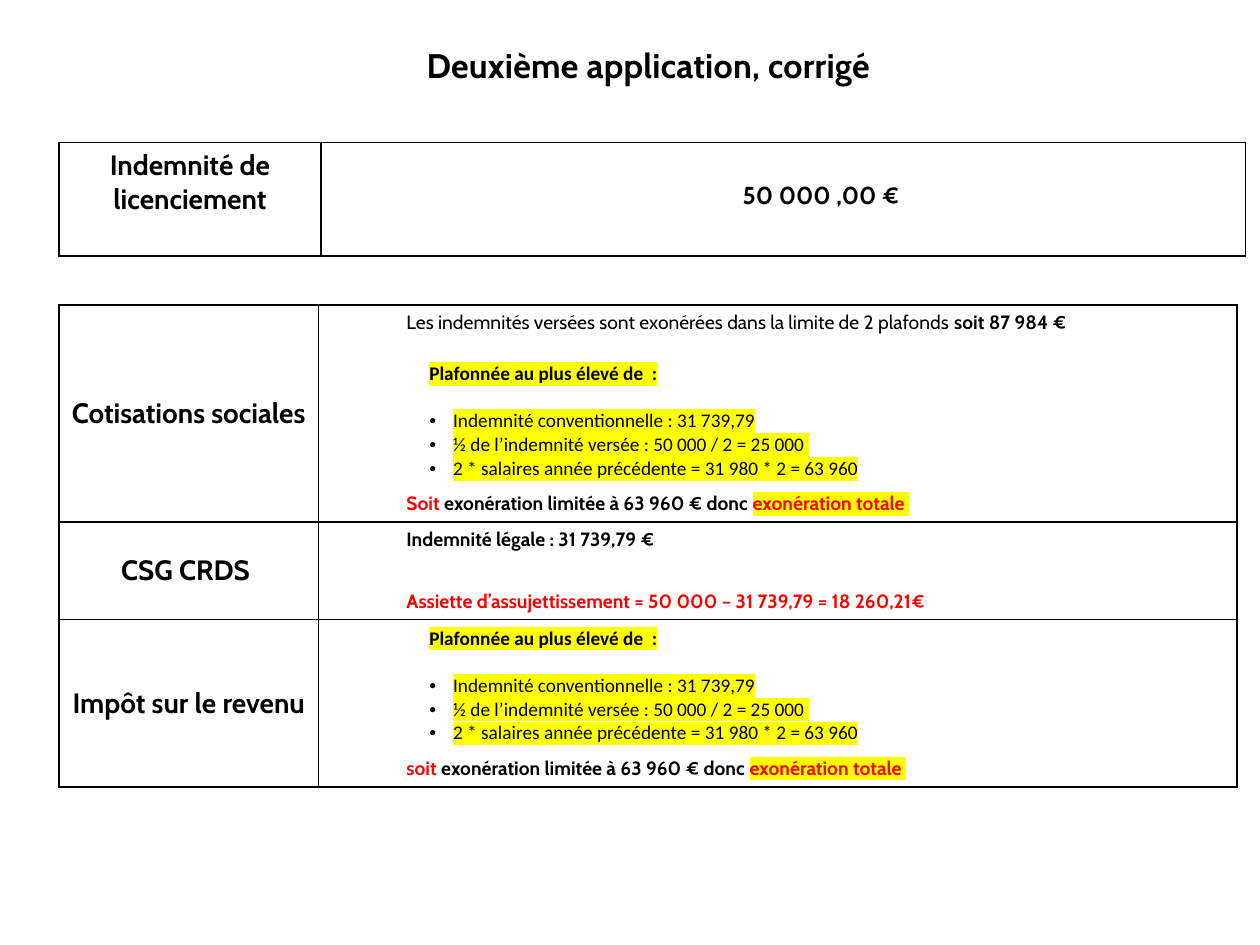
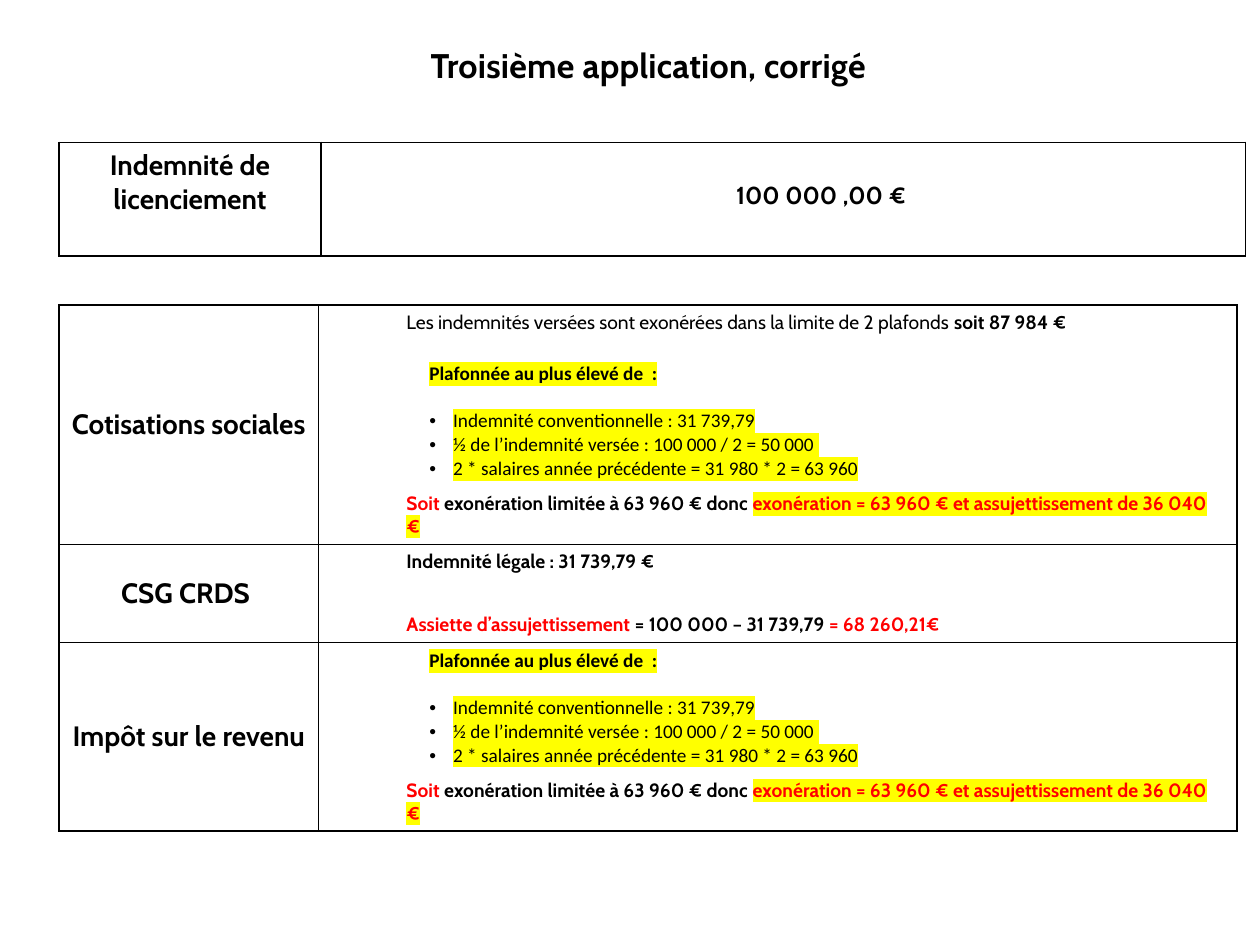
from dataclasses import dataclass, field

from lxml.etree import SubElement
from pptx import Presentation
from pptx.dml.color import RGBColor
from pptx.enum.text import MSO_ANCHOR as Anchor, PP_ALIGN as Align
from pptx.oxml.ns import qn
from pptx.slide import Slide
from pptx.table import _Cell as Cell
from pptx.text.text import TextFrame, _Paragraph as TextParagraph
from pptx.util import Cm, Length, Pt

BLACK, RED, YELLOW = "000000", "FF0000", "FFFF00"
HEADING_FONT, LIST_FONT = "Cabin", "Calibri"
BORDER_WIDTH = Pt(1)

FORMATS: dict[str, dict] = {
    "title": {"alignment": Align.CENTER, "line_spacing": Pt(23)},
    "label": {"alignment": Align.CENTER},
    "amount": {"alignment": Align.CENTER, "line_spacing": Pt(13), "space_before": Pt(4.5)},
    "statement": {"line_spacing": Pt(13), "space_before": Pt(6.9), "space_after": Pt(15.8)},
    "ceiling": {"space_after": Pt(13.4)},
    "bullet": {},
}
INDENTS: dict[str, tuple[Length, Length]] = {
    "amount": (Cm(1.52), Cm(0)),
    "statement": (Cm(1.52), Cm(0)),
    "ceiling": (Cm(1.98), Cm(0)),
    "bullet": (Cm(2.46), Cm(-0.48)),
}


@dataclass(frozen=True)
class Run:
    text: str
    size: float = 11
    bold: bool = True
    color: str = BLACK
    font: str = HEADING_FONT
    highlight: str = ""
    tracking: int = 0


@dataclass(frozen=True)
class Paragraph:
    style: str
    runs: list[Run]


@dataclass(frozen=True)
class Entry:
    paragraphs: list[Paragraph]
    anchor: Anchor = Anchor.MIDDLE


@dataclass(frozen=True)
class Grid:
    top: Length
    columns: list[Length]
    rows: list[Length]
    left: Length = Cm(1.19)


@dataclass(frozen=True)
class Correction:
    title: str
    indemnity: str
    half: str
    verdict: str
    taxable_base: list[Run]
    row_heights: list[Length]
    income_lead: str = "Soit "
    columns: list[Length] = field(default_factory=lambda: [Cm(5.23), Cm(18.52)])


CORRECTIONS = [
    Correction(
        "Deuxième application, corrigé ",
        "50 000",
        "25 000",
        "exonération totale ",
        [Run("Assiette d’assujettissement = 50 000 – 31 739,79 = 18 260,21€", color=RED)],
        [Cm(4.37), Cm(1.97), Cm(3.37)],
        income_lead="soit ",
    ),
    Correction(
        "Troisième application, corrigé ",
        "100 000",
        "50 000",
        "exonération = 63 960 € et assujettissement de 36 040 €",
        [
            Run("Assiette d’assujettissement ", color=RED),
            Run("= 100 000 – 31 739,79 "),
            Run("= 68 260,21€", color=RED),
        ],
        [Cm(4.83), Cm(1.97), Cm(3.8)],
    ),
]


def rgb(color: str) -> RGBColor:
    return RGBColor.from_string(color)


def write_run(target: TextParagraph, content: Run) -> None:
    run = target.add_run()
    run.text = content.text
    run.font.color.rgb = rgb(content.color)
    properties = run.font._element
    if content.highlight:
        mark = SubElement(properties, qn("a:highlight"))
        SubElement(mark, qn("a:srgbClr"), val=content.highlight)
    if content.tracking:
        properties.set("spc", str(content.tracking))
    values = {"name": content.font, "size": Pt(content.size), "bold": content.bold}
    for attribute, value in values.items():
        setattr(run.font, attribute, value)


def write_paragraphs(frame: TextFrame, paragraphs: list[Paragraph]) -> None:
    for index, content in enumerate(paragraphs):
        target = frame.add_paragraph() if index else frame.paragraphs[0]
        for attribute, value in FORMATS[content.style].items():
            setattr(target, attribute, value)
        properties = target._p.get_or_add_pPr()
        if content.style in INDENTS:
            margin, indent = INDENTS[content.style]
            properties.set("marL", str(margin))
            properties.set("indent", str(indent))
        if content.style == "bullet":
            SubElement(properties, qn("a:buFont"), typeface="Arial")
            SubElement(properties, qn("a:buChar"), char="•")
        for run in content.runs:
            write_run(target, run)


def draw_borders(cell: Cell) -> None:
    properties = cell._tc.get_or_add_tcPr()
    for position, side in enumerate(("a:lnL", "a:lnR", "a:lnT", "a:lnB")):
        line = SubElement(properties, qn(side), w=str(BORDER_WIDTH))
        fill = SubElement(line, qn("a:solidFill"))
        SubElement(fill, qn("a:srgbClr"), val=BLACK)
        properties.insert(position, line)


def add_grid(slide: Slide, grid: Grid, entries: list[list[Entry]]) -> None:
    table = slide.shapes.add_table(
        len(grid.rows), len(grid.columns), grid.left, grid.top,
        sum(grid.columns), sum(grid.rows),
    ).table
    table.first_row = table.horz_banding = False
    for column, width in zip(table.columns, grid.columns):
        column.width = width
    for row, height, contents in zip(table.rows, grid.rows, entries):
        row.height = height
        for cell, entry in zip(row.cells, contents):
            cell.fill.background()
            cell.vertical_anchor = entry.anchor
            draw_borders(cell)
            write_paragraphs(cell.text_frame, entry.paragraphs)


def label(text: str, anchor: Anchor = Anchor.MIDDLE) -> Entry:
    return Entry([Paragraph("label", [Run(text, size=16)])], anchor)


def ceiling_comparison(correction: Correction, lead: str) -> list[Paragraph]:
    candidates = [
        "Indemnité conventionnelle : 31 739,79",
        f"½ de l’indemnité versée : {correction.indemnity} / 2 = {correction.half} ",
        "2 * salaires année précédente = 31 980 * 2 = 63 960",
    ]
    heading = Run("Plafonnée au plus élevé de  :", font=LIST_FONT, highlight=YELLOW)
    conclusion = [
        Run(lead, color=RED),
        Run("exonération limitée à 63 960 € donc "),
        Run(correction.verdict, color=RED, highlight=YELLOW),
    ]
    return [
        Paragraph("ceiling", [heading]),
        *(
            Paragraph("bullet", [Run(text, bold=False, font=LIST_FONT, highlight=YELLOW)])
            for text in candidates
        ),
        Paragraph("statement", conclusion),
    ]


def add_title(slide: Slide, text: str) -> None:
    frame = slide.shapes.add_textbox(Cm(1.37), Cm(0.91), Cm(23.57), Cm(0.94)).text_frame
    margins = dict.fromkeys(("margin_left", "margin_top", "margin_right", "margin_bottom"), 0)
    for attribute, value in {"word_wrap": True, **margins}.items():
        setattr(frame, attribute, value)
    write_paragraphs(frame, [Paragraph("title", [Run(text, size=19.5, tracking=10)])])


def add_correction(slide: Slide, correction: Correction) -> None:
    add_title(slide, correction.title)
    exemption_limit = Paragraph("statement", [
        Run("Les indemnités versées sont exonérées dans la limite de 2 plafonds ", bold=False),
        Run("soit 87 984 €"),
    ])
    social_contributions = [exemption_limit, *ceiling_comparison(correction, "Soit ")]
    csg_base = [
        Paragraph("statement", [Run("Indemnité légale : 31 739,79 €")]),
        Paragraph("statement", correction.taxable_base),
    ]
    income_tax = ceiling_comparison(correction, correction.income_lead)
    add_grid(slide, Grid(Cm(6.15), correction.columns, correction.row_heights), [
        [label("Cotisations sociales"), Entry(social_contributions)],
        [label("CSG CRDS "), Entry(csg_base)],
        [label("Impôt sur le revenu "), Entry(income_tax)],
    ])
    amount = Paragraph("amount", [Run(f"{correction.indemnity} ,00 €", size=14)])
    add_grid(slide, Grid(Cm(2.87), [Cm(5.28), Cm(18.64)], [Cm(2.29)]), [
        [label("Indemnité de licenciement", Anchor.TOP), Entry([amount])],
    ])


def main() -> None:
    presentation = Presentation()
    presentation.slide_width, presentation.slide_height = Cm(25.4), Cm(19.05)
    blank_layout = presentation.slide_layouts[6]
    for correction in CORRECTIONS:
        add_correction(presentation.slides.add_slide(blank_layout), correction)
    presentation.save("out.pptx")


if __name__ == "__main__":
    main()
